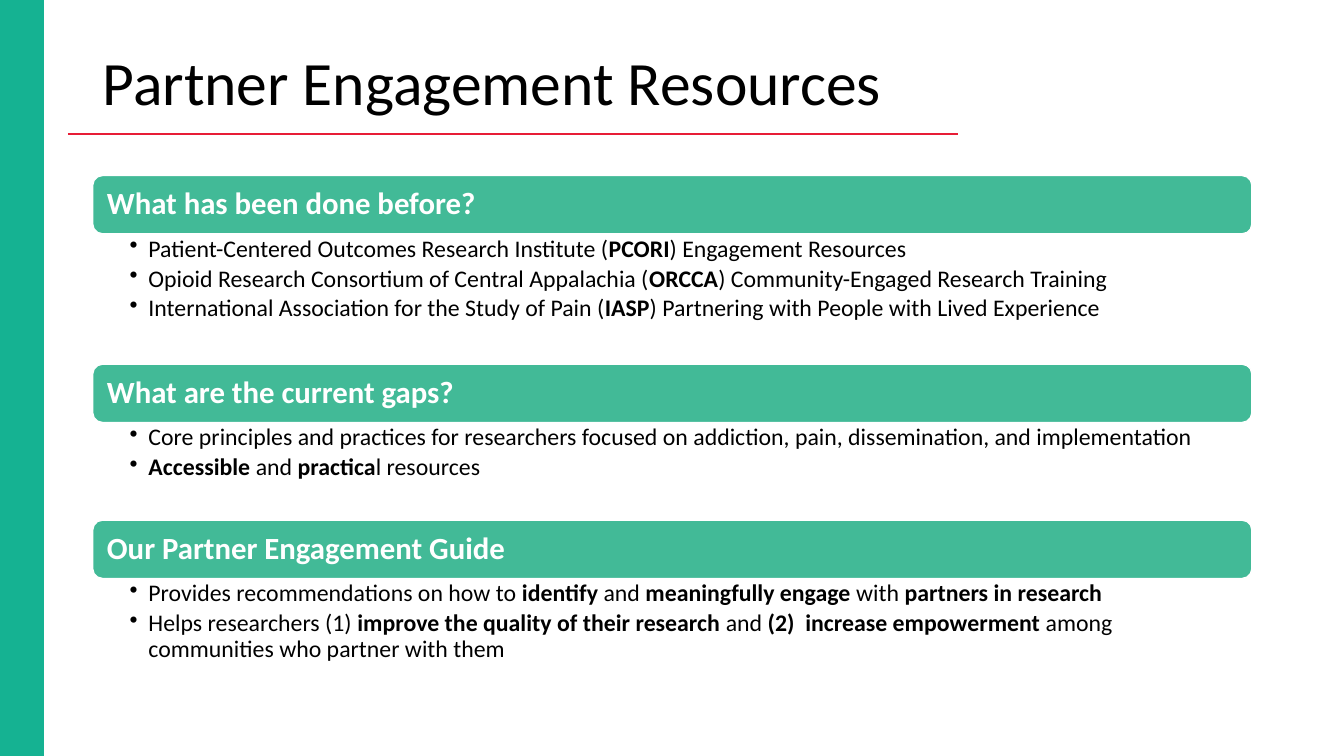
import pptx
import pptx.dml.color
import pptx.enum.shapes
import pptx.enum.text
import pptx.oxml
import pptx.oxml.ns
import pptx.util

Pt = pptx.util.Pt
SHAPES = pptx.enum.shapes.MSO_SHAPE
ANCHOR = pptx.enum.text.MSO_ANCHOR

LEFT, WIDTH = 66.24, 828
BAND_HEIGHT = 41.6
SECTIONS_TOP = 125.4

SECTIONS = [
    ("What has been done before?", 93.2, [
        "Patient-Centered Outcomes Research Institute (**PCORI**) Engagement Resources",
        "Opioid Research Consortium of Central Appalachia (**ORCCA**) Community-Engaged Research Training",
        "International Association for the Study of Pain (**IASP**) Partnering with People with Lived Experience",
    ]),
    ("What are the current gaps?", 69.8, [
        "Core principles and practices for researchers focused on addiction, pain, dissemination, and implementation",
        "**Accessible** and **practica**l resources",
    ]),
    ("Our Partner Engagement Guide", 87.8, [
        "Provides recommendations on how to **identify** and **meaningfully engage** with **partners in research**",
        "Helps researchers (1) **improve the quality of their research **and** (2)  increase empowerment **"
        "among communities who partner with them",
    ]),
]


class SlideBuilder:
    """Draw styled elements on the current slide, with lengths in points."""

    colors = {"side": "15B292", "band": "42BA97", "rule": "E71D36",
              "text": "000000", "white": "FFFFFF"}
    font = "Calibri"

    def __init__(self, slide):
        self.slide = slide

    def color(self, name):
        return pptx.dml.color.RGBColor.from_string(self.colors[name])

    def shape(self, kind, left, top, width, height, fill, line):
        shape = self.slide.shapes.add_shape(kind, Pt(left), Pt(top), Pt(width), Pt(height))
        shape.shadow.inherit = False
        shape.fill.solid()
        shape.fill.fore_color.rgb = self.color(fill)
        shape.line.color.rgb = self.color(line)
        shape.line.width = Pt(1)
        return shape

    def rule(self, left, right, top):
        line = self.slide.shapes.add_connector(
            pptx.enum.shapes.MSO_CONNECTOR.STRAIGHT, Pt(left), Pt(top), Pt(right), Pt(top))
        line.line.color.rgb = self.color("rule")
        line.line.width = Pt(1.5)
        pptx.oxml.ns.qn("a:effectLst")
        line._element.spPr.append(pptx.oxml.parse_xml(
            f"<a:effectLst {pptx.oxml.ns.nsdecls('a')}/>"))

    def frame(self, box, left, top, right, bottom, anchor=ANCHOR.TOP):
        frame = box.text_frame
        frame.word_wrap = True
        frame.vertical_anchor = anchor
        frame.margin_left, frame.margin_top = Pt(left), Pt(top)
        frame.margin_right, frame.margin_bottom = Pt(right), Pt(bottom)
        return frame

    def style(self, para, size, color="text", bold=False):
        para.alignment = pptx.enum.text.PP_ALIGN.LEFT
        para.line_spacing = 0.9
        for span in para.runs:
            span.font.name = self.font
            span.font.size = Pt(size)
            span.font.bold = bold
            span.font.color.rgb = self.color(color)

    def text_box(self, left, top, width, height):
        return self.slide.shapes.add_textbox(Pt(left), Pt(top), Pt(width), Pt(height))

    def title(self, text):
        frame = self.frame(self.text_box(LEFT, 33.84, WIDTH, 62), 7.2, 3.6, 7.2, 3.6)
        frame.text = text
        self.style(frame.paragraphs[0], 44)

    def band(self, top, text):
        box = self.shape(SHAPES.ROUNDED_RECTANGLE, LEFT, top, WIDTH, BAND_HEIGHT, "band", "white")
        frame = self.frame(box, 8.2, 0, 8.2, 0, ANCHOR.MIDDLE)
        frame.text = text
        self.style(frame.paragraphs[0], 22, "white", True)

    def bullets(self, top, height, items):
        frame = self.frame(self.text_box(LEFT, top, WIDTH, height), 26.3, 2, 12.2, 2)
        frame.text = "\n".join(items)
        for para, item in zip(frame.paragraphs, items):
            properties = para._p.get_or_add_pPr()
            properties.set("marL", str(Pt(13.5)))
            properties.set("indent", str(Pt(-13.5)))
            properties.append(pptx.oxml.parse_xml(
                f"<a:buChar {pptx.oxml.ns.nsdecls('a')} char='•'/>"))
            para.space_after = Pt(3)
            para.clear()
            parts = item.split("**")
            for part in parts:
                para.add_run().text = part
            self.style(para, 17)
            for span in para.runs[1::2]:
                span.font.bold = True
            for span in para.runs:
                if not span.text:
                    para._p.remove(span._r)


def main():
    deck = pptx.Presentation()
    deck.slide_width, deck.slide_height = Pt(960), Pt(540)
    page = SlideBuilder(deck.slides.add_slide(deck.slide_layouts[6]))
    page.shape(SHAPES.RECTANGLE, 0, 0, 31, 540, "side", "side")
    page.rule(48.5, 684.5, 95.6)
    page.title("Partner Engagement Resources")
    top = SECTIONS_TOP
    for heading, height, items in SECTIONS:
        page.band(top, heading)
        page.bullets(top + BAND_HEIGHT, height, items)
        top += BAND_HEIGHT + height
    deck.save("out.pptx")


if __name__ == "__main__":
    main()
